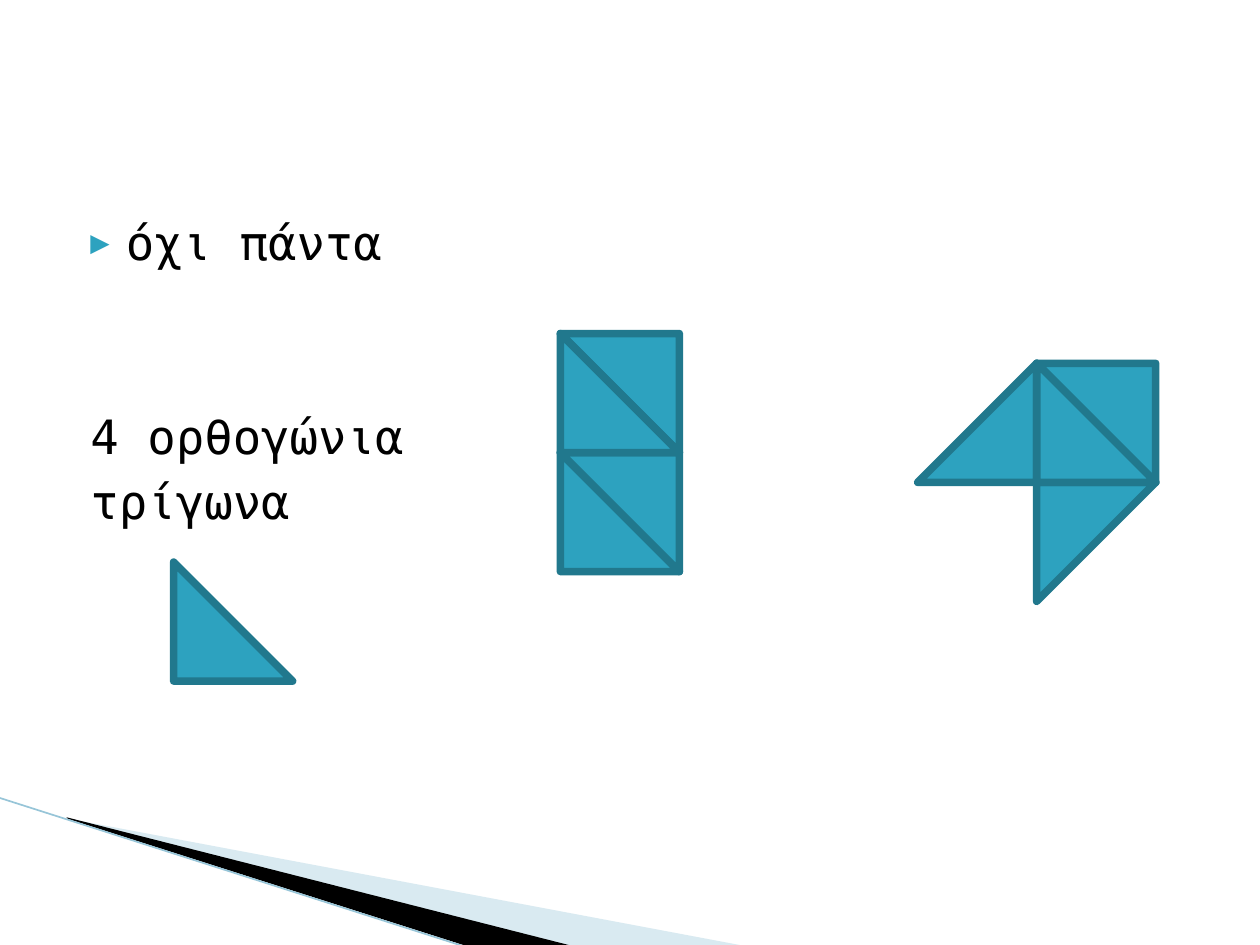
from lxml import etree
from pptx import Presentation
from pptx.dml.color import RGBColor
from pptx.enum.shapes import MSO_CONNECTOR, MSO_SHAPE
from pptx.oxml.ns import qn
from pptx.util import Pt

LINE = MSO_CONNECTOR.STRAIGHT
TRI = MSO_SHAPE.RIGHT_TRIANGLE
HEX = {"teal": "2DA2BF", "edge": "21788D", "pale": "A0CBDC",
       "rule": "97C5D8", "black": "000000"}
FONT = "DejaVu Sans Mono"
SIDE = 68


def tint(name):
    return RGBColor.from_string(HEX[name])


def add_tri(shapes, left, top, turn):
    tri = shapes.add_shape(TRI, Pt(left), Pt(top), Pt(SIDE), Pt(SIDE))
    tri.rotation = turn
    tri.shadow.inherit = False
    tri.fill.solid()
    tri.fill.fore_color.rgb = tint("teal")
    tri.line.color.rgb = tint("edge")
    tri.line.width = Pt(4.33)


deck = Presentation()
deck.slide_width, deck.slide_height = Pt(720), Pt(540)
slide = deck.slides.add_slide(deck.slide_layouts[6])
shapes = slide.shapes

wedges = [
    ("pale", [(39.6, 468.5), (428.4, 540.7), (328.3, 540.7), (39.6, 468)]),
    ("black", [(38.2, 467.3), (329, 540.7), (267.8, 541.4), (38.9, 468)]),
]
for name, dots in wedges:
    pen = shapes.build_freeform(*dots[0], scale=Pt(1))
    pen.add_line_segments(dots[1:], close=True)
    wedge = pen.convert_to_shape()
    wedge.shadow.inherit = False
    wedge.fill.solid()
    wedge.fill.fore_color.rgb = tint(name)
    wedge.line.fill.background()
    if name == "pale":
        shade = wedge.fill._xPr.find(".//" + qn("a:srgbClr"))
        etree.SubElement(shade, qn("a:alpha"), val="40000")

rule = shapes.add_connector(LINE, Pt(-0.7), Pt(455.8), Pt(267.1), Pt(541.4))
rule.line.color.rgb = tint("rule")
rule.line.width = Pt(0.95)
etree.SubElement(rule._element.spPr, qn("a:effectLst"))

box = shapes.add_textbox(Pt(36), Pt(118.6), Pt(648), Pt(354.4))
frame = box.text_frame
frame.word_wrap = True
frame.text = "όχι πάντα\n4 ορθογώνια\nτρίγωνα"
for para, gap in zip(frame.paragraphs, (0, 78, 5)):
    props = para._p.get_or_add_pPr()
    props.set("marL", str(Pt(28.8)))
    props.set("indent", str(Pt(-20.16)))
    para.space_before = Pt(gap)
    if gap:
        etree.SubElement(props, qn("a:buNone"))
    else:
        mark = etree.SubElement(props, qn("a:buClr"))
        etree.SubElement(mark, qn("a:srgbClr"), val=HEX["teal"])
        etree.SubElement(props, qn("a:buSzPct"), val="68000")
        etree.SubElement(props, qn("a:buFont"), typeface=FONT)
        etree.SubElement(props, qn("a:buChar"), char="▶")
    for run in para.runs:
        run.font.name = FONT
        run.font.size = Pt(27)
        run.font.color.rgb = tint("black")

add_tri(shapes, 99.2, 321.2, 0)

figures = [
    (320.2, 190.6, [(0, 1, 0), (0, 1, 180), (0, 0, 180), (0, 0, 0)]),
    (524.4, 207.6, [(1, 0, 180), (0, 0, 270), (1, 1, 90), (1, 0, 0)]),
]
for left, top, parts in figures:
    group = shapes.add_group_shape()
    for col, row, turn in parts:
        add_tri(group.shapes, left + col * SIDE, top + row * SIDE, turn)

deck.save("out.pptx")
